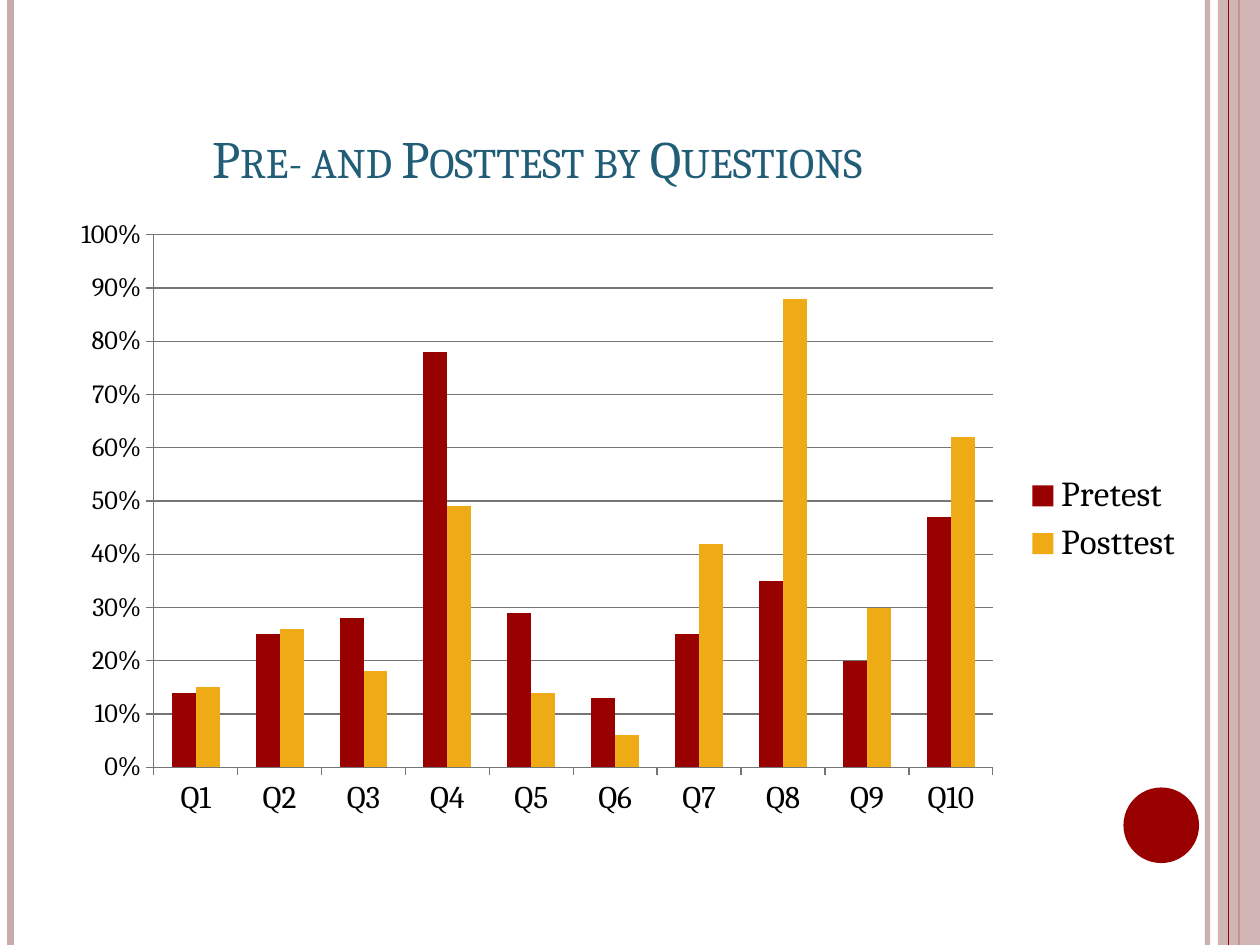
from dataclasses import dataclass

from lxml import etree
from pptx import Presentation
from pptx.chart.data import CategoryChartData
from pptx.dml.color import RGBColor
from pptx.enum.chart import XL_CHART_TYPE, XL_LEGEND_POSITION, XL_TICK_MARK
from pptx.enum.shapes import MSO_CONNECTOR, MSO_SHAPE
from pptx.enum.text import MSO_ANCHOR, MSO_AUTO_SIZE, PP_ALIGN
from pptx.oxml.ns import qn
from pptx.util import Pt

COLUMN = XL_CHART_TYPE.COLUMN_CLUSTERED
RIGHT = XL_LEGEND_POSITION.RIGHT
OUT, NONE = XL_TICK_MARK.OUTSIDE, XL_TICK_MARK.NONE
LINE = MSO_CONNECTOR.STRAIGHT
RECT, OVAL = MSO_SHAPE.RECTANGLE, MSO_SHAPE.OVAL
BOTTOM, LEFT = MSO_ANCHOR.BOTTOM, PP_ALIGN.LEFT
FIXED = MSO_AUTO_SIZE.NONE


@dataclass(frozen=True)
class Theme:
    font: str = "Cambria"
    title: str = "215D77"
    red: str = "990000"
    gold: str = "EFAB16"
    rose: str = "CAABAB"
    grid: str = "757575"
    text: str = "000000"
    head: int = 30
    cats: int = 18
    vals: int = 15
    key: int = 20
    base: int = 10


T = Theme()
WIDE, HIGH = 720, 540
TITLE = "Pre- and Posttest by Questions"
SERIES = [
    ("Pretest", T.red, [0.14, 0.25, 0.28, 0.78, 0.29, 0.13, 0.25, 0.35, 0.2, 0.47]),
    ("Posttest", T.gold, [0.15, 0.26, 0.18, 0.49, 0.14, 0.06, 0.42, 0.88, 0.3, 0.62]),
]
CATS = [f"Q{i}" for i in range(1, 11)]
# x, width, colour, opacity
RULES = [(690, 3, T.rose, 93), (6, 4.5, T.rose, 100), (708, 1.5, T.red, 100)]
BAND = (696, 0, 24, HIGH)
EDGE = (702, 0.75, T.red, 100)
DOT = (642, 450, 43.2, 43.2)
HEAD = (114, 21.6, 588, 90)
CHART = (36, 120, 648, 354)
PLOT = {"x": 0.08, "y": 0.04, "w": 0.74, "h": 0.86}


def rgb(code):
    return RGBColor.from_string(code)


def box(area):
    return [Pt(v) for v in area]


def fade(part, alpha):
    if alpha < 100:
        tint = next(part._element.spPr.iter(qn("a:srgbClr")))
        etree.SubElement(tint, qn("a:alpha"), val=str(alpha * 1000))


def rule(shapes, x, width, color, alpha):
    line = shapes.add_connector(LINE, Pt(x), 0, Pt(x), Pt(HIGH))
    line.line.color.rgb = rgb(color)
    line.line.width = Pt(width)
    fade(line, alpha)
    etree.SubElement(line._element.spPr, qn("a:effectLst"))


def solid(shapes, kind, area, color, alpha=100):
    part = shapes.add_shape(kind, *box(area))
    part.shadow.inherit = False
    part.fill.solid()
    part.fill.fore_color.rgb = rgb(color)
    part.line.fill.background()
    fade(part, alpha)


def style(font, size, color=T.text):
    font.name = T.font
    font.size = Pt(size)
    font.color.rgb = rgb(color)


def write(frame, text, *, size, color, align, anchor, caps):
    frame.word_wrap = True
    frame.auto_size = FIXED
    frame.vertical_anchor = anchor
    para = frame.paragraphs[0]
    para.alignment = align
    run = para.add_run()
    run.text = text
    style(run.font, size, color)
    run.font._element.set("cap", caps)


def axes(chart):
    for axis, size in ((chart.category_axis, T.cats), (chart.value_axis, T.vals)):
        axis.major_tick_mark = OUT
        axis.minor_tick_mark = NONE
        axis.format.line.color.rgb = rgb(T.grid)
        style(axis.tick_labels.font, size)
    chart.category_axis.has_major_gridlines = False
    axis = chart.value_axis
    axis.minimum_scale, axis.maximum_scale, axis.major_unit = 0, 1, 0.1
    axis.tick_labels.number_format = "0%"
    axis.tick_labels.number_format_is_linked = False
    axis.has_major_gridlines = True
    axis.major_gridlines.format.line.color.rgb = rgb(T.grid)


def place(chart):
    area = chart._chartSpace.chart.plotArea
    for old in area.findall(qn("c:layout")):
        area.remove(old)
    layout = etree.Element(qn("c:layout"))
    area.insert(0, layout)
    manual = etree.SubElement(layout, qn("c:manualLayout"))
    marks = {"layoutTarget": "inner", "xMode": "edge", "yMode": "edge", **PLOT}
    for name, val in marks.items():
        etree.SubElement(manual, qn(f"c:{name}"), val=str(val))


def graph(shapes):
    data = CategoryChartData(number_format="0%")
    data.categories = CATS
    for name, _, vals in SERIES:
        data.add_series(name, vals)
    chart = shapes.add_chart(COLUMN, *box(CHART), data).chart
    chart.has_title = False
    style(chart.font, T.base)
    plot = chart.plots[0]
    plot.gap_width, plot.overlap = 150, 0
    plot.vary_by_categories = False
    for bars, (_, color, _) in zip(plot.series, SERIES):
        bars.format.fill.solid()
        bars.format.fill.fore_color.rgb = rgb(color)
    axes(chart)
    chart.has_legend = True
    chart.legend.position = RIGHT
    chart.legend.include_in_layout = False
    style(chart.legend.font, T.key)
    place(chart)


def main():
    deck = Presentation()
    deck.slide_width, deck.slide_height = Pt(WIDE), Pt(HIGH)
    slide = deck.slides.add_slide(deck.slide_layouts[5])
    shapes = slide.shapes
    for spec in RULES:
        rule(shapes, *spec)
    solid(shapes, RECT, BAND, T.rose, 87)
    rule(shapes, *EDGE)
    solid(shapes, OVAL, DOT, T.red)
    title = shapes.title
    shapes._spTree.append(title._element)
    title.left, title.top, title.width, title.height = box(HEAD)
    write(title.text_frame, TITLE, size=T.head, color=T.title,
          align=LEFT, anchor=BOTTOM, caps="small")
    graph(shapes)
    deck.save("out.pptx")


if __name__ == "__main__":
    main()
